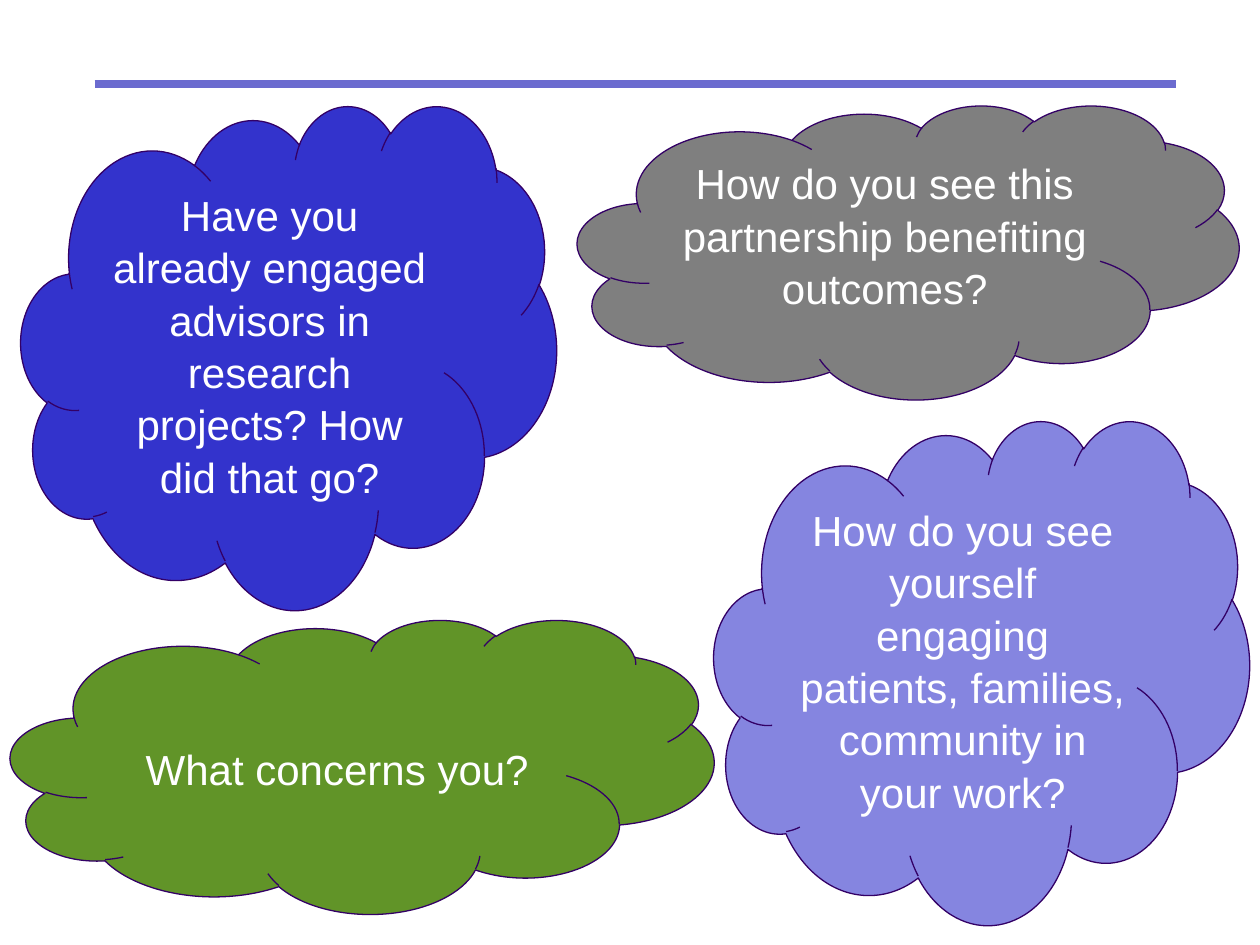
from dataclasses import dataclass

import pptx
import pptx.dml.color
import pptx.enum.shapes
import pptx.enum.text
import pptx.oxml.ns
import pptx.util
from lxml import etree

EMU_PER_PX = 7620  # 120 px to the inch


@dataclass(frozen=True)
class Theme:
    font: str = "Arial"
    text_size: float = 24
    line_spacing: float = 1.04
    outline_width: float = 0.75
    rule_width: float = 4.5
    text: str = "FFFFFF"
    outline: str = "330066"
    rule: str = "6B6BCF"
    green: str = "619428"
    lavender: str = "8585E0"
    gray: str = "7F7F7F"
    blue: str = "3333CC"


THEME = Theme()


@dataclass(frozen=True)
class Cloud:
    left: int
    top: int
    width: int
    height: int
    fill: str
    question: str
    top_inset: int = 6


CLOUDS = (
    Cloud(10, 590, 670, 280, THEME.green, "What concerns you?", top_inset=74),
    Cloud(680, 400, 510, 480, THEME.lavender,
          "How do you see yourself engaging patients, families, community in your work?"),
    Cloud(550, 100, 630, 280, THEME.gray,
          "How do you see this partnership benefiting outcomes?"),
    Cloud(20, 100, 510, 480, THEME.blue,
          "Have you already engaged advisors in research projects? How did that go?"),
)


def px(length: int) -> pptx.util.Emu:
    return pptx.util.Emu(length * EMU_PER_PX)


def rgb(color: str) -> pptx.dml.color.RGBColor:
    return pptx.dml.color.RGBColor.from_string(color)


def write_text(shape, text: str, *, size: float, color: str, font: str,
               line_spacing: float, top_inset: int) -> None:
    frame = shape.text_frame
    frame.word_wrap = True
    frame.vertical_anchor = pptx.enum.text.MSO_ANCHOR.TOP
    frame.margin_left = frame.margin_right = px(12)
    frame.margin_top, frame.margin_bottom = px(top_inset), px(6)
    paragraph = frame.paragraphs[0]
    paragraph.alignment = pptx.enum.text.PP_ALIGN.CENTER
    paragraph.line_spacing = line_spacing
    run = paragraph.add_run()
    run.text = text
    run.font.name = font
    run.font.size = pptx.util.Pt(size)
    run.font.color.rgb = rgb(color)


def draw_cloud(slide, cloud: Cloud) -> None:
    shape = slide.shapes.add_shape(
        pptx.enum.shapes.MSO_SHAPE.CLOUD,
        px(cloud.left), px(cloud.top), px(cloud.width), px(cloud.height))
    shape.shadow.inherit = False
    shape.fill.solid()
    shape.fill.fore_color.rgb = rgb(cloud.fill)
    shape.line.color.rgb = rgb(THEME.outline)
    shape.line.width = pptx.util.Pt(THEME.outline_width)
    write_text(shape, cloud.question, size=THEME.text_size, color=THEME.text,
               font=THEME.font, line_spacing=THEME.line_spacing,
               top_inset=cloud.top_inset)


def draw_rule(slide, left: int, right: int, y: int) -> None:
    rule = slide.shapes.add_connector(
        pptx.enum.shapes.MSO_CONNECTOR.STRAIGHT, px(left), px(y), px(right), px(y))
    rule.line.color.rgb = rgb(THEME.rule)
    rule.line.width = pptx.util.Pt(THEME.rule_width)
    etree.SubElement(rule._element.spPr, pptx.oxml.ns.qn("a:effectLst"))


def main() -> None:
    presentation = pptx.Presentation()
    presentation.slide_width, presentation.slide_height = px(1200), px(900)
    slide = presentation.slides.add_slide(presentation.slide_layouts[6])
    for cloud in CLOUDS:
        draw_cloud(slide, cloud)
    draw_rule(slide, left=90, right=1120, y=80)
    presentation.save("out.pptx")


if __name__ == "__main__":
    main()
